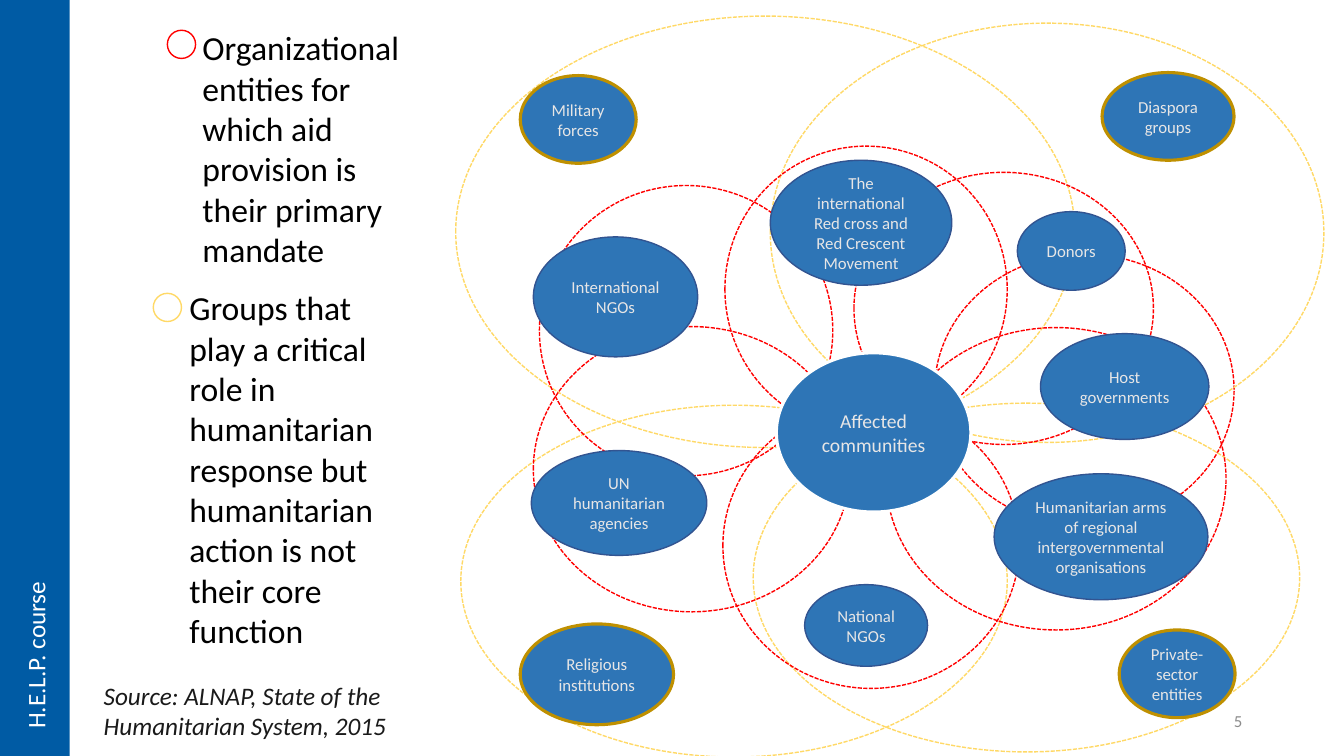
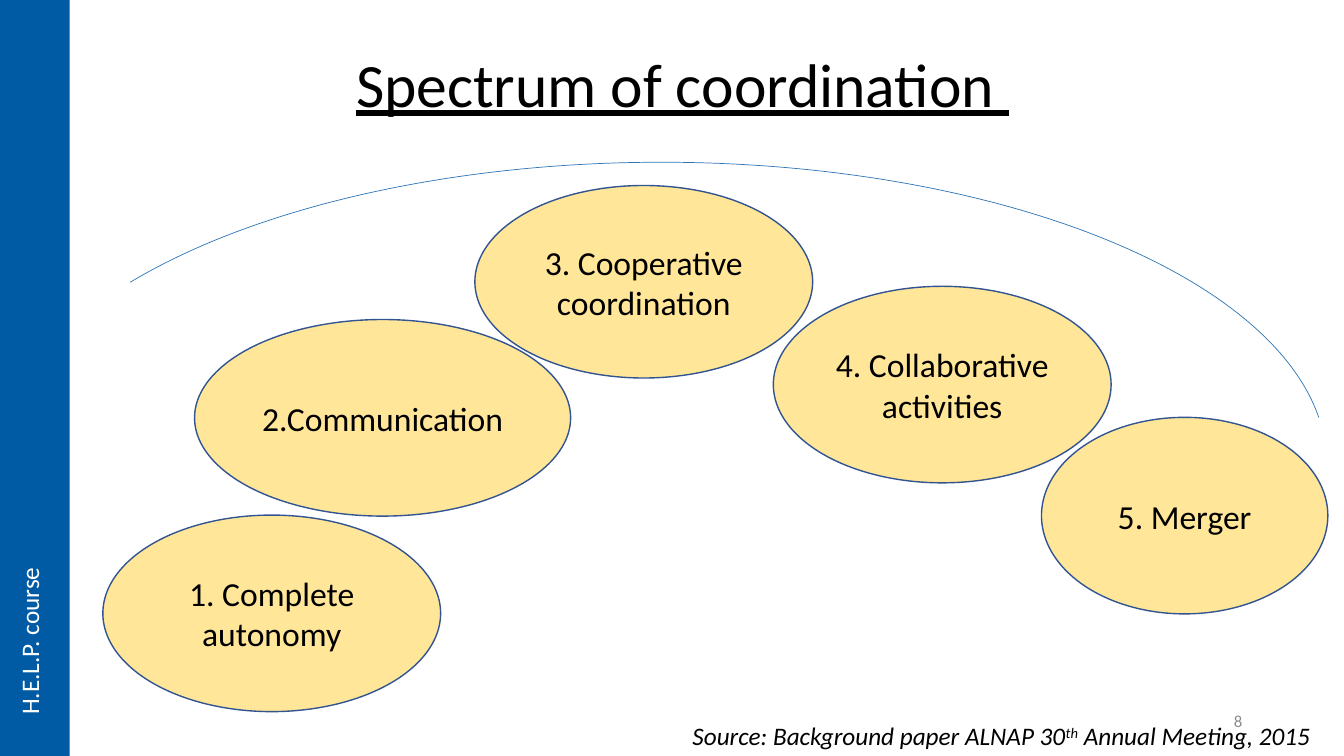
from pptx import Presentation
from pptx.dml.color import RGBColor as Rgb
from pptx.enum.dml import MSO_LINE as Dash
from pptx.enum.shapes import MSO_SHAPE as Shape
from pptx.enum.text import MSO_ANCHOR as Anchor, PP_ALIGN as Align
from pptx.util import Inches, Pt

FONT = "Calibri"
HUES = {
    "band": "005BA4", "blue": "2E75B6", "edge": "325491", "white": "FFFFFF",
    "red": "FF0000", "yellow": "FFD966", "cream": "FFE699", "gold": "BF9000",
    "pale": "E7E6E6", "black": "000000", "ink": "1A1A1A", "grey": "8C8C8C",
}

RINGS = [
    ("red", (9.27, 2.52, 2.97, 2.7)),
    ("yellow", (4.52, 0.16, 6.14, 4.28)),
    ("yellow", (4.57, 4.02, 5.42, 3.49)),
    ("yellow", (7.47, 4, 5.42, 3.46)),
    ("yellow", (7.64, 0.23, 5.49, 4.16)),
    ("red", (5.35, 1.84, 2.91, 2.88)),
    ("red", (5.29, 3.24, 3.14, 2.83)),
    ("red", (7.17, 4, 2.94, 2.83)),
    ("red", (8.79, 3.25, 3.37, 3)),
    ("red", (7.19, 1.45, 2.8, 2.84)),
    ("red", (8.47, 1.71, 2.97, 2.7)),
]
CORE = [
    ("The international Red cross and Red Crescent Movement", (7.64, 1.59, 1.8, 1.24)),
    ("Donors", (10.09, 2.1, 1.07, 0.78)),
    ("Host governments", (10.32, 3.31, 1.67, 1.05)),
    ("Humanitarian arms of regional intergovernmental organisations", (9.86, 4.7, 2.12, 1.25)),
    ("National NGOs", (7.98, 5.8, 1.22, 0.81)),
    ("UN humanitarian agencies", (5.27, 4.47, 1.74, 1.04)),
    ("International\nNGOs", (5.29, 2.35, 1.63, 1.19)),
]
OUTER = [
    ("Diaspora groups", (10.93, 0.72, 1.31, 0.87)),
    ("Private- sector\nentities", (11.1, 6.25, 1.15, 0.87)),
    ("Religious institutions", (5.16, 6.19, 1.52, 1)),
    ("Military\nforces", (5.16, 0.75, 1.15, 0.87)),
]
KEYS = [
    ("red", (1.66, 0.3), (1.91, 0.22, 2.23, 2.52),
     "Organizational entities for which aid provision is their primary mandate"),
    ("yellow", (1.52, 2.91), (1.78, 2.8, 2.23, 3.74),
     "Groups that play a critical role in humanitarian response but "
     "humanitarian action is not their core function"),
]
STEPS = [
    ("1. Complete autonomy", (1.02, 5.11, 3.35, 1.95)),
    ("2.Communication", (1.93, 3.17, 3.73, 1.95)),
    ("3. Cooperative coordination", (4.71, 1.84, 3.35, 1.91)),
    ("4. Collaborative activities", (7.67, 2.84, 3.35, 1.95)),
    ("5. Merger", (10.33, 4.14, 2.84, 1.95)),
]


def hue(name):
    """Return the named colour."""
    return Rgb.from_string(HUES[name])


def write(frame, text, size, tint, align=Align.LEFT, **style):
    """Fill a frame: newlines part paragraphs, carets enclose superscripts."""
    frame.word_wrap = True
    for row, line in enumerate(text.split("\n")):
        para = frame.add_paragraph() if row else frame.paragraphs[0]
        para.alignment = align
        for pos, part in enumerate(line.split("^")):
            run = para.add_run()
            run.text = part
            font = run.font
            font.name, font.size, font.color.rgb = FONT, Pt(size), hue(tint)
            for key, value in style.items():
                setattr(font, key, value)
            if pos % 2:
                run._r.get_or_add_rPr().set("baseline", "30000")


def draw(slide, box, kind=Shape.OVAL, fill=None, line=None, width=1, dash=None):
    """Add a flat preset shape with the given fill and outline."""
    shape = slide.shapes.add_shape(kind, *map(Inches, box))
    shape.shadow.inherit = False
    if fill:
        shape.fill.solid()
        shape.fill.fore_color.rgb = hue(fill)
    else:
        shape.fill.background()
    if line:
        shape.line.color.rgb = hue(line)
        shape.line.width = Pt(width)
        shape.line.dash_style = dash
    else:
        shape.line.fill.background()
    return shape


def bubble(slide, text, box, fill, line, size, tint, width=1):
    """Add an ellipse with centred text."""
    frame = draw(slide, box, fill=fill, line=line, width=width).text_frame
    frame.vertical_anchor = Anchor.MIDDLE
    write(frame, text, size, tint, Align.CENTER)


def label(slide, text, box, size, tint, align=Align.LEFT, **style):
    """Add a text box and return its frame."""
    frame = slide.shapes.add_textbox(*map(Inches, box)).text_frame
    write(frame, text, size, tint, align, **style)
    return frame


def base(deck, layout, number, left, top):
    """Add a slide with the side band, course name and page number."""
    slide = deck.slides.add_slide(deck.slide_layouts[layout])
    draw(slide, (0, 0, 0.69, 7.5), Shape.RECTANGLE, "band")
    side = label(slide, "H.E.L.P. course", (left, top, 0.5, 1.8), 18, "white")
    side._txBody.bodyPr.set("vert", "vert270")
    page = label(slide, number, (9.42, 6.95, 3, 0.4), 12, "grey", Align.RIGHT)
    page.vertical_anchor = Anchor.MIDDLE
    return slide


def actors(deck):
    """Build the map of groups around affected communities."""
    slide = base(deck, 6, "5", 0.15, 5.53)
    for line, box in RINGS:
        draw(slide, box, line=line, dash=Dash.SQUARE_DOT)
    bubble(slide, "Affected communities", (7.7, 3.5, 1.93, 1.58),
           "blue", "white", 14, "pale", 2.25)
    for group, line, width in ((CORE, "edge", 1), (OUTER, "gold", 2.25)):
        for text, box in group:
            bubble(slide, text, box, "blue", line, 12, "pale", width)
    for line, spot, box, text in KEYS:
        draw(slide, (*spot, 0.28, 0.28), line=line)
        label(slide, text, box, 24, "black")
    label(slide, "Source: ALNAP, State of the Humanitarian System, 2015",
          (0.93, 6.7, 3.55, 0.71), 18, "ink", italic=True)


def spectrum(deck):
    """Build the arc of five degrees of coordination."""
    slide = base(deck, 5, "8", 0.09, 5.39)
    title = slide.shapes.title
    title.left, title.top, title.width, title.height = map(Inches, (1.02, 0.14, 11.5, 1.45))
    title.text_frame.vertical_anchor = Anchor.MIDDLE
    write(title.text_frame, "Spectrum of coordination ", 44, "black",
          Align.CENTER, underline=True)
    title.text_frame.paragraphs[0].line_spacing = 0.9
    arc = draw(slide, (-0.04, 1.61, 13.2, 5.99), Shape.ARC, line="blue", width=0.5)
    arc.adjustments[0], arc.adjustments[1] = 119.35, 213.57
    for text, box in STEPS:
        bubble(slide, text, box, "cream", "edge", 24, "black")
    label(slide, "Source: Background paper ALNAP 30^th^ Annual Meeting, 2015",
          (6.77, 7.1, 6.56, 0.4), 18, "black", italic=True)


def main():
    """Build and save the deck."""
    deck = Presentation()
    deck.slide_width, deck.slide_height = Inches(13.33), Inches(7.5)
    actors(deck)
    spectrum(deck)
    deck.save("out.pptx")


if __name__ == "__main__":
    main()
